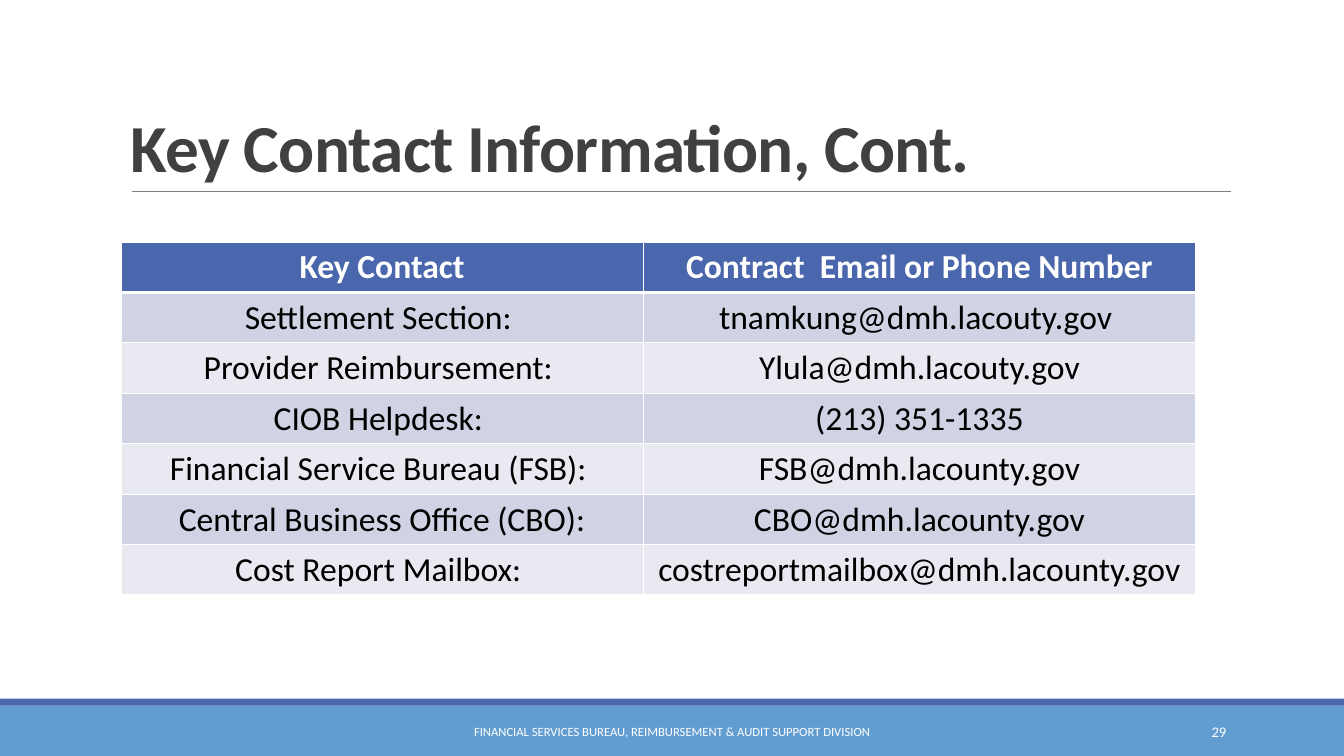
from dataclasses import dataclass

from lxml import etree
from pptx import Presentation
from pptx import util as u
from pptx.dml.color import RGBColor
from pptx.enum import shapes, text
from pptx.oxml import ns

SLIDE_WIDTH, SLIDE_HEIGHT = u.Inches(13.33), u.Inches(7.5)
FONT = "Calibri"

WHITE = RGBColor(0xFF, 0xFF, 0xFF)
BLACK = RGBColor(0, 0, 0)
TITLE_GREY = RGBColor(0x40, 0x40, 0x40)
RULE_GREY = RGBColor(0x80, 0x80, 0x80)
BAND_BLUE = RGBColor(0x62, 0x9D, 0xD1)
DEEP_BLUE = RGBColor(0x4A, 0x66, 0xAC)
ROW_TINTS = (RGBColor(0xD0, 0xD3, 0xE3), RGBColor(0xE9, 0xEA, 0xF1))


@dataclass(frozen=True)
class Area:
    """A region in percent of the slide's width and height."""
    left: float
    top: float
    width: float
    height: float

    def box(self) -> tuple[int, int, int, int]:
        return (across(self.left), down(self.top),
                across(self.width), down(self.height))


@dataclass(frozen=True)
class Bar:
    area: Area
    color: RGBColor


@dataclass(frozen=True)
class Label:
    area: Area
    words: str
    size: float
    color: RGBColor
    align: text.PP_ALIGN
    anchor: text.MSO_ANCHOR = text.MSO_ANCHOR.MIDDLE
    bold: bool = False
    line_spacing: float = 1.0
    tracking: int = 0  # hundredths of a point


BARS = (
    Bar(Area(0, 93.33, 100, 6.67), BAND_BLUE),
    Bar(Area(0, 92.4, 100, 0.93), DEEP_BLUE),
)
TITLE_RULE = Area(9.83, 25.33, 81.77, 0)
LABELS = (
    Label(Area(9, 4.13, 82.5, 21.2), "Key Contact Information, Cont.", 48,
          TITLE_GREY, text.PP_ALIGN.LEFT, text.MSO_ANCHOR.BOTTOM, True, 0.85, -50),
    Label(Area(30.23, 94.13, 39.53, 5.33),
          "FINANCIAL SERVICES BUREAU, REIMBURSEMENT & AUDIT SUPPORT DIVISION",
          9, WHITE, text.PP_ALIGN.CENTER),
    Label(Area(81.25, 94.13, 10.73, 5.33), "29", 10.5, WHITE, text.PP_ALIGN.RIGHT),
)
TABLE_AREA = Area(9, 32, 79.97, 46.67)
COLUMN_WIDTHS = (38.86, 41.11)
CONTACTS = (
    ("Key Contact", "Contract  Email or Phone Number"),
    ("Settlement Section: ", "tnamkung@dmh.lacouty.gov "),
    ("Provider Reimbursement: ", "Ylula@dmh.lacouty.gov"),
    ("CIOB Helpdesk: ", "(213) 351-1335"),
    ("Financial Service Bureau (FSB): ", "FSB@dmh.lacounty.gov"),
    ("Central Business Office (CBO):", "CBO@dmh.lacounty.gov"),
    ("Cost Report Mailbox: ", "costreportmailbox@dmh.lacounty.gov"),
)


def across(percent: float) -> int:
    return round(SLIDE_WIDTH * percent / 100)


def down(percent: float) -> int:
    return round(SLIDE_HEIGHT * percent / 100)


def style_paragraph(paragraph, size: float, color: RGBColor,
                    align: text.PP_ALIGN, bold: bool) -> None:
    paragraph.alignment = align
    font = paragraph.font
    font.name, font.size, font.bold = FONT, u.Pt(size), bold
    font.color.rgb = color


def draw_bar(slide, bar: Bar) -> None:
    shape = slide.shapes.add_shape(shapes.MSO_SHAPE.RECTANGLE, *bar.area.box())
    shape.shadow.inherit = False
    shape.fill.solid()
    shape.fill.fore_color.rgb = bar.color
    shape.line.fill.background()


def draw_rule(slide, area: Area) -> None:
    left, top, width, height = area.box()
    connector = slide.shapes.add_connector(
        shapes.MSO_CONNECTOR.STRAIGHT, left, top, left + width, top + height)
    connector.line.color.rgb = RULE_GREY
    connector.line.width = u.Pt(0.5)
    etree.SubElement(connector._element.spPr, ns.qn("a:effectLst"))


def draw_label(slide, label: Label) -> None:
    frame = slide.shapes.add_textbox(*label.area.box()).text_frame
    frame.word_wrap = True
    frame.vertical_anchor = label.anchor
    paragraph = frame.paragraphs[0]
    paragraph.text = label.words
    paragraph.line_spacing = label.line_spacing
    style_paragraph(paragraph, label.size, label.color, label.align, label.bold)
    if label.tracking:
        paragraph.font._element.set("spc", str(label.tracking))


def draw_borders(cell, top: float, bottom: float) -> None:
    properties = cell._tc.get_or_add_tcPr()
    for side, points in (("L", 1), ("R", 1), ("T", top), ("B", bottom)):
        line = etree.SubElement(properties, ns.qn(f"a:ln{side}"), w=str(u.Pt(points)))
        fill = etree.SubElement(line, ns.qn("a:solidFill"))
        etree.SubElement(fill, ns.qn("a:srgbClr"), val=str(WHITE))


def draw_contacts(slide) -> None:
    table = slide.shapes.add_table(
        len(CONTACTS), len(COLUMN_WIDTHS), *TABLE_AREA.box()).table
    for column, width in zip(table.columns, COLUMN_WIDTHS):
        column.width = across(width)
    for row, contact in enumerate(CONTACTS):
        header = row == 0
        table.rows[row].height = down(TABLE_AREA.height / len(CONTACTS))
        for column, words in enumerate(contact):
            cell = table.cell(row, column)
            draw_borders(cell, top=3 if row == 1 else 1, bottom=3 if header else 1)
            cell.fill.solid()
            cell.fill.fore_color.rgb = DEEP_BLUE if header else ROW_TINTS[(row - 1) % 2]
            cell.text = words
            style_paragraph(cell.text_frame.paragraphs[0], 24,
                            WHITE if header else BLACK, text.PP_ALIGN.CENTER, header)


def main() -> None:
    presentation = Presentation()
    presentation.slide_width, presentation.slide_height = SLIDE_WIDTH, SLIDE_HEIGHT
    slide = presentation.slides.add_slide(presentation.slide_layouts[6])

    # Footer bands and title rule
    for bar in BARS:
        draw_bar(slide, bar)
    draw_rule(slide, TITLE_RULE)

    # Title, footer and page number
    for label in LABELS:
        draw_label(slide, label)

    # Contact table
    draw_contacts(slide)
    presentation.save("out.pptx")


if __name__ == "__main__":
    main()
